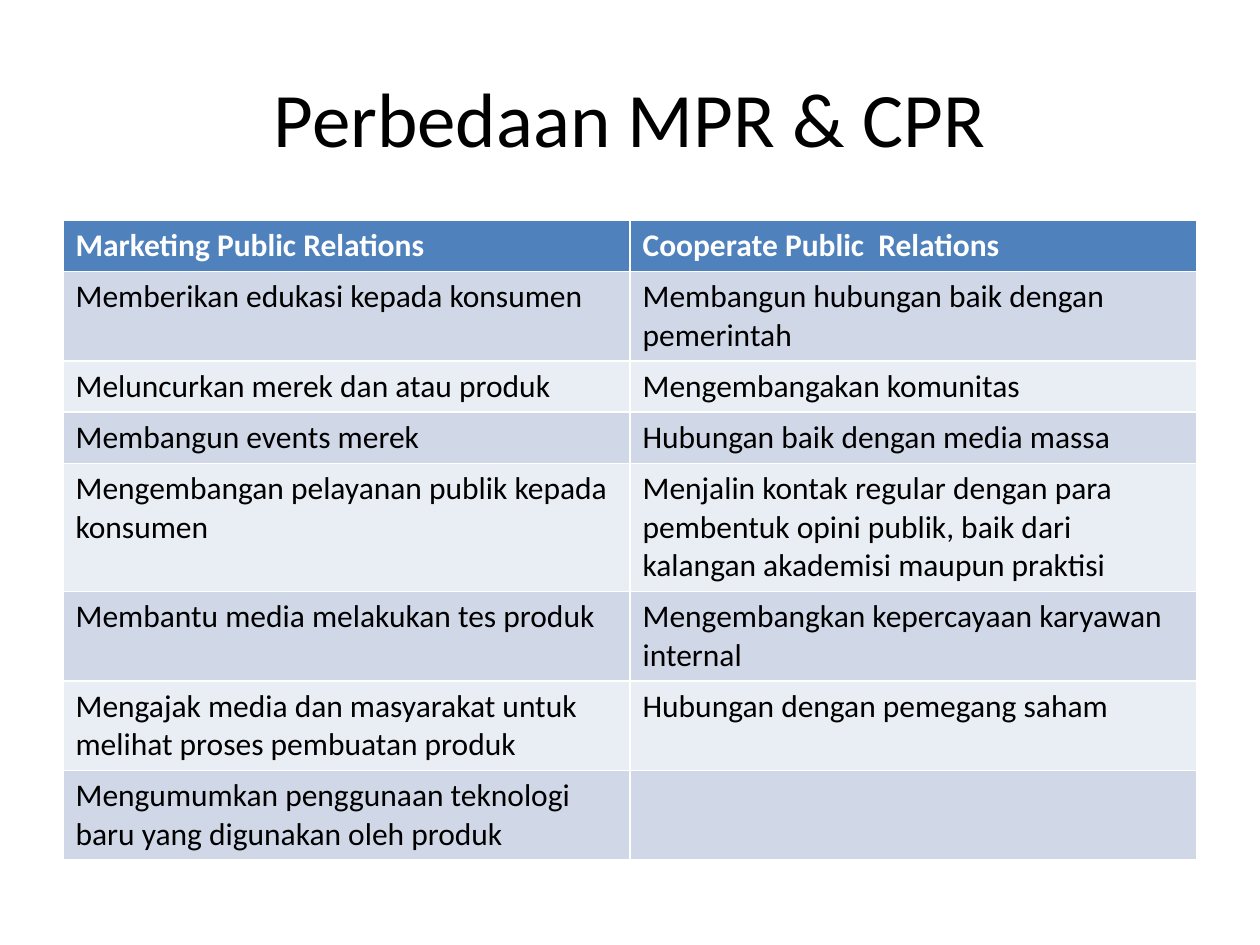
from pptx import Presentation
from pptx.dml.color import RGBColor
from pptx.enum.text import MSO_ANCHOR, PP_ALIGN
from pptx.util import Inches, Pt

COLORS = {
    "header": "4F81BD",
    "odd": "D0D8E8",
    "even": "E9EDF4",
    "white": "FFFFFF",
    "black": "000000",
}
FONT = "Calibri"
ROWS = [
    ("Marketing Public Relations", "Cooperate Public  Relations", 0.36),
    ("Memberikan edukasi kepada konsumen", "Membangun hubungan baik dengan pemerintah", 0.62),
    ("Meluncurkan merek dan atau produk", "Mengembangakan komunitas", 0.36),
    ("Membangun events merek", "Hubungan baik dengan media massa", 0.36),
    (
        "Mengembangan pelayanan publik kepada konsumen",
        "Menjalin kontak regular dengan para pembentuk opini publik, "
        "baik dari kalangan akademisi maupun praktisi",
        0.89,
    ),
    ("Membantu media melakukan tes produk", "Mengembangkan kepercayaan karyawan internal", 0.62),
    (
        "Mengajak media dan masyarakat untuk melihat proses pembuatan produk",
        "Hubungan dengan pemegang saham",
        0.62,
    ),
    ("Mengumumkan penggunaan teknologi baru yang digunakan oleh produk", "", 0.62),
]


def format_text(para, size, color, bold=False):
    for span in para.runs:
        span.font.name = FONT
        span.font.size = Pt(size)
        span.font.bold = bold
        span.font.color.rgb = RGBColor.from_string(COLORS[color])


deck = Presentation()
deck.slide_width = Inches(10)
deck.slide_height = Inches(7.5)
page = deck.slides.add_slide(deck.slide_layouts[5])

title = page.shapes.title
title.left, title.top = Inches(0.5), Inches(0.3)
title.width, title.height = Inches(9), Inches(1.25)
title.text_frame.text = "Perbedaan MPR & CPR"
title.text_frame.vertical_anchor = MSO_ANCHOR.MIDDLE
title_para = title.text_frame.paragraphs[0]
title_para.alignment = PP_ALIGN.CENTER
format_text(title_para, 44, "black")

total_height = sum(height for *texts, height in ROWS)
table = page.shapes.add_table(
    len(ROWS), 2, Inches(0.5), Inches(1.75), Inches(9), Inches(total_height)
).table

for row_index, (*texts, height) in enumerate(ROWS):
    table.rows[row_index].height = Inches(height)
    is_header = row_index == 0
    fill = "header" if is_header else "odd" if row_index % 2 else "even"
    for column_index, text in enumerate(texts):
        cell = table.cell(row_index, column_index)
        cell.fill.solid()
        cell.fill.fore_color.rgb = RGBColor.from_string(COLORS[fill])
        cell.text_frame.text = text
        format_text(cell.text_frame.paragraphs[0], 18, "white" if is_header else "black", is_header)

deck.save("out.pptx")
